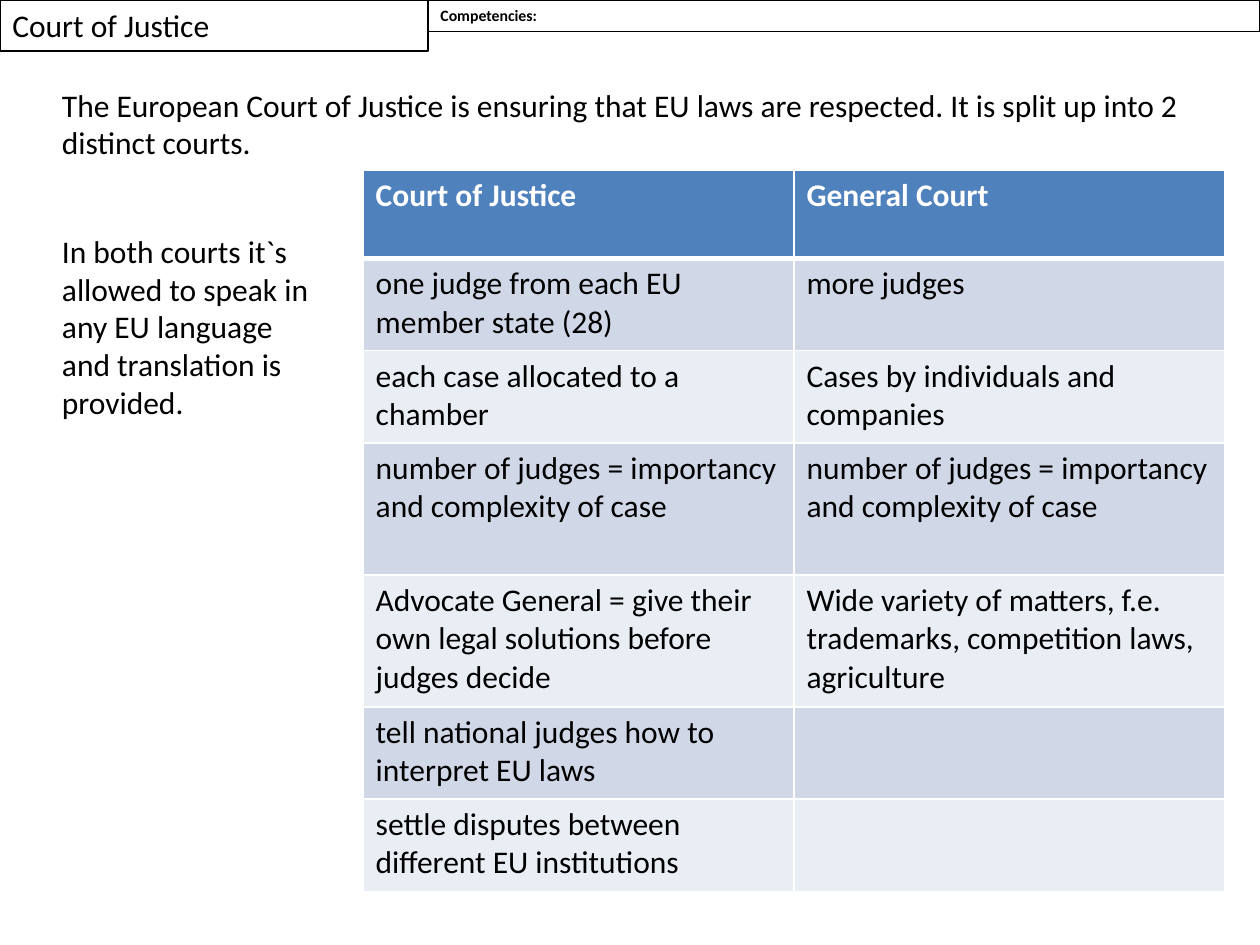
from dataclasses import dataclass, field

from lxml.etree import SubElement
from pptx import Presentation
from pptx.dml.color import RGBColor
from pptx.enum.shapes import MSO_SHAPE
from pptx.enum.text import MSO_ANCHOR, MSO_AUTO_SIZE, PP_ALIGN
from pptx.oxml.ns import qn
from pptx.slide import Slide
from pptx.util import Cm, Pt

COLOURS = {
    "text": "000000",
    "white": "FFFFFF",
    "header": "4F81BD",
    "dark_band": "D0D8E8",
    "light_band": "E9EDF4",
}

COURT_ROWS = [
    ("Court of Justice", "General Court"),
    ("one judge from each EU member state (28)", "more judges"),
    ("each case allocated to a chamber", "Cases by individuals and companies"),
    (
        "number of judges = importancy and complexity of case",
        "number of judges = importancy and complexity of case",
    ),
    (
        "Advocate General = give their own legal solutions before judges decide",
        "Wide variety of matters, f.e. trademarks, competition laws, agriculture",
    ),
    ("tell national judges how to interpret EU laws", ""),
    ("settle disputes between different EU institutions", ""),
]
ROW_HEIGHTS = [1.78, 1.86, 1.86, 2.66, 2.66, 1.86, 1.86]


def rgb(name):
    return RGBColor.from_string(COLOURS[name])


@dataclass
class SlideBuilder:
    slide: Slide
    text_format: dict = field(
        default_factory=lambda: {"name": "Calibri", "size": Pt(18), "bold": False}
    )

    def set_text(self, text_frame, text, colour="text", **changes):
        paragraph = text_frame.paragraphs[0]
        paragraph.alignment = PP_ALIGN.LEFT
        target = paragraph.font
        if text:
            run = paragraph.add_run()
            run.text = text
            target = run.font
        for attribute, value in {**self.text_format, **changes}.items():
            setattr(target, attribute, value)
        target.color.rgb = rgb(colour)

    def fill_frame(self, shape, text, **changes):
        frame_format = {
            "word_wrap": True,
            "auto_size": MSO_AUTO_SIZE.SHAPE_TO_FIT_TEXT,
            "vertical_anchor": MSO_ANCHOR.TOP,
        }
        for attribute, value in frame_format.items():
            setattr(shape.text_frame, attribute, value)
        self.set_text(shape.text_frame, text, **changes)

    def framed_box(self, text, left, top, width, height, **changes):
        shape = self.slide.shapes.add_shape(
            MSO_SHAPE.RECTANGLE, Cm(left), Cm(top), Cm(width), Cm(height)
        )
        shape.shadow.inherit = False
        shape.fill.background()
        shape.line.color.rgb = rgb("text")
        shape.line.width = Pt(0.75)
        self.fill_frame(shape, text, **changes)

    def text_box(self, text, left, top, width, height):
        shape = self.slide.shapes.add_textbox(
            Cm(left), Cm(top), Cm(width), Cm(height)
        )
        self.fill_frame(shape, text)

    def cell_borders(self, cell, widths):
        properties = cell._tc.get_or_add_tcPr()
        for side, width in widths.items():
            line = SubElement(properties, qn(f"a:ln{side}"), w=str(Pt(width)))
            fill = SubElement(line, qn("a:solidFill"))
            SubElement(fill, qn("a:srgbClr"), val=COLOURS["white"])

    def table(self, rows, row_heights, left, top, width):
        column_count = len(rows[0])
        table = self.slide.shapes.add_table(
            len(rows), column_count,
            Cm(left), Cm(top), Cm(width), Cm(sum(row_heights)),
        ).table
        for column in table.columns:
            column.width = Cm(width / column_count)
        for row_index, texts in enumerate(rows):
            table.rows[row_index].height = Cm(row_heights[row_index])
            is_header = row_index == 0
            band = "dark_band" if row_index % 2 else "light_band"
            widths = {
                "L": 1,
                "R": 1,
                "T": 3 if row_index == 1 else 1,
                "B": 3 if is_header else 1,
            }
            for column_index, text in enumerate(texts):
                cell = table.cell(row_index, column_index)
                self.cell_borders(cell, widths)
                cell.fill.solid()
                cell.fill.fore_color.rgb = rgb("header" if is_header else band)
                self.set_text(
                    cell.text_frame, text,
                    colour="white" if is_header else "text", bold=is_header,
                )


def main():
    presentation = Presentation()
    presentation.slide_width = Cm(25.4)
    presentation.slide_height = Cm(19.05)
    builder = SlideBuilder(presentation.slides.add_slide(presentation.slide_layouts[6]))

    builder.framed_box("Court of Justice", 0, 0, 8.63, 1.03)
    builder.framed_box("Competencies:", 8.63, 0, 16.77, 0.64, size=Pt(9), bold=True)
    builder.text_box(
        "The European Court of Justice is ensuring that EU laws are respected. "
        "It is split up into 2 distinct courts.",
        1, 1.6, 23.6, 1.8,
    )
    builder.table(COURT_ROWS, ROW_HEIGHTS, 7.32, 3.43, 17.37)
    builder.text_box(
        "In both courts it`s allowed to speak in any EU language "
        "and translation is provided.",
        1, 4.55, 5.77, 4.11,
    )
    presentation.save("out.pptx")


if __name__ == "__main__":
    main()
